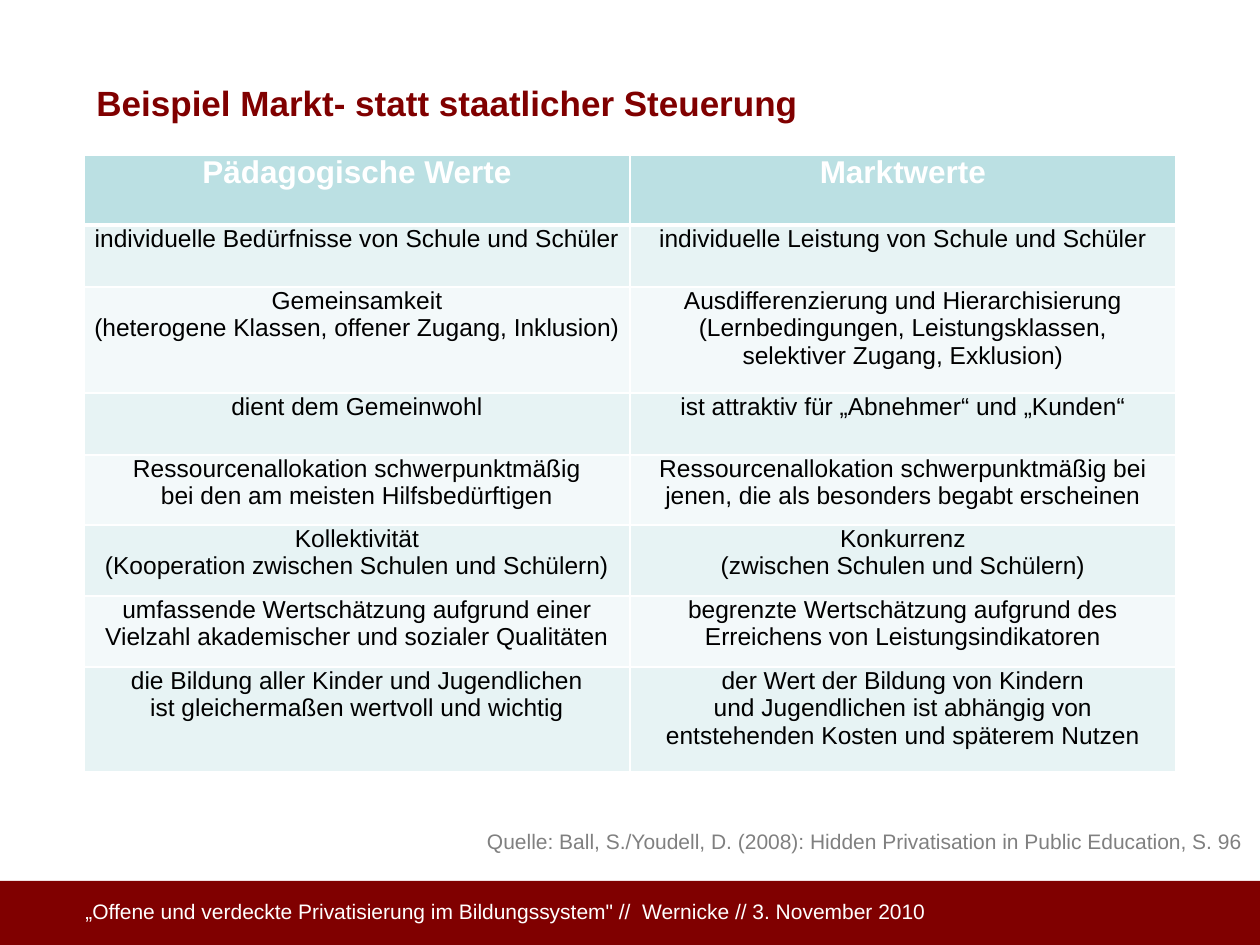
from lxml.etree import SubElement
from pptx import Presentation
from pptx.dml.color import RGBColor
from pptx.enum.shapes import MSO_SHAPE
from pptx.enum.text import PP_ALIGN
from pptx.oxml.ns import qn
from pptx.util import Pt

PX = 914400 / 126
FONT = "Arial"
MAROON = RGBColor(0x80, 0x00, 0x00)
GRAY = RGBColor(0x80, 0x80, 0x80)
WHITE = RGBColor(0xFF, 0xFF, 0xFF)
BLACK = RGBColor(0x00, 0x00, 0x00)
HEADER_FILL = RGBColor(0xBB, 0xE0, 0xE3)
BAND_FILLS = (RGBColor(0xE7, 0xF3, 0xF4), RGBColor(0xF3, 0xF9, 0xFA))

ROW_HEIGHTS = (70, 62, 106, 62, 70, 71, 71, 105)
VALUES = (
    ("Pädagogische Werte", "Marktwerte"),
    ("individuelle Bedürfnisse von Schule und Schüler",
     "individuelle Leistung von Schule und Schüler"),
    ("Gemeinsamkeit\n(heterogene Klassen, offener Zugang, Inklusion)",
     "Ausdifferenzierung und Hierarchisierung\n(Lernbedingungen, Leistungsklassen,\n"
     "selektiver Zugang, Exklusion)"),
    ("dient dem Gemeinwohl", "ist attraktiv für „Abnehmer“ und „Kunden“"),
    ("Ressourcenallokation schwerpunktmäßig\nbei den am meisten Hilfsbedürftigen",
     "Ressourcenallokation schwerpunktmäßig bei jenen, die als besonders begabt erscheinen"),
    ("Kollektivität\n(Kooperation zwischen Schulen und Schülern)",
     "Konkurrenz\v(zwischen Schulen und Schülern)"),
    ("umfassende Wertschätzung aufgrund einer Vielzahl akademischer und sozialer Qualitäten",
     "begrenzte Wertschätzung aufgrund des Erreichens von Leistungsindikatoren"),
    ("die Bildung aller Kinder und Jugendlichen\nist gleichermaßen wertvoll und wichtig",
     "der Wert der Bildung von Kindern\nund Jugendlichen ist abhängig von\n"
     "entstehenden Kosten und späterem Nutzen"),
)


def px(n):
    return round(n * PX)


def format_text(tf, size, color, bold=False, align=PP_ALIGN.LEFT):
    for p in tf.paragraphs:
        p.alignment = align
        for r in p.runs:
            r.font.name = FONT
            r.font.size = Pt(size)
            r.font.bold = bold
            r.font.color.rgb = color


def add_text(slide, box, text, size, color, bold=False, align=PP_ALIGN.LEFT):
    tf = slide.shapes.add_textbox(*map(px, box)).text_frame
    tf.word_wrap = True
    tf.text = text
    format_text(tf, size, color, bold, align)
    return tf


def set_borders(cell, bottom):
    """Draw white cell borders, 1 pt except for the given bottom width."""
    tc_pr = cell._tc.get_or_add_tcPr()
    for tag, width in (("a:lnL", 1), ("a:lnR", 1), ("a:lnT", 1), ("a:lnB", bottom)):
        ln = SubElement(tc_pr, qn(tag), w=str(Pt(width)))
        fill = SubElement(ln, qn("a:solidFill"))
        SubElement(fill, qn("a:srgbClr"), val=str(WHITE))


def add_values_table(slide, left, top, width):
    frame = slide.shapes.add_table(len(VALUES), 2, px(left), px(top),
                                   px(width), px(sum(ROW_HEIGHTS)))
    table = frame.table
    for i, (height, texts) in enumerate(zip(ROW_HEIGHTS, VALUES)):
        table.rows[i].height = px(height)
        header = i == 0
        for j, text in enumerate(texts):
            cell = table.cell(i, j)
            cell.margin_left = cell.margin_right = px(6)
            cell.margin_top = cell.margin_bottom = 0
            cell.text_frame.text = text
            format_text(cell.text_frame, 18 if header else 14,
                        WHITE if header else BLACK, header, PP_ALIGN.CENTER)
            set_borders(cell, 3 if header else 1)
            cell.fill.solid()
            cell.fill.fore_color.rgb = HEADER_FILL if header else BAND_FILLS[(i - 1) % 2]


def add_footer(slide, left, top, width, height):
    sp = slide.shapes.add_shape(MSO_SHAPE.RECTANGLE, px(left), px(top),
                                px(width), px(height))
    sp.shadow.inherit = False
    sp.fill.solid()
    sp.fill.fore_color.rgb = MAROON
    sp.line.fill.background()
    add_text(slide, (left + 73, top + 11, 1134, 30),
             "„Offene und verdeckte Privatisierung im Bildungssystem\" //  "
             "Wernicke // 3. November 2010", 12, WHITE)


def main():
    prs = Presentation()
    prs.slide_width, prs.slide_height = px(1260), px(945)
    slide = prs.slides.add_slide(prs.slide_layouts[6])
    add_footer(slide, 0, 881, 1260, 64)
    title = add_text(slide, (84, 67, 1103, 59),
                     "Beispiel Markt- statt staatlicher Steuerung", 20, MAROON, True)
    title.paragraphs[0].line_spacing = 1.2
    add_text(slide, (0, 822, 1255, 38),
             "Quelle: Ball, S./Youdell, D. (2008): Hidden Privatisation in Public "
             "Education, S. 96", 12, GRAY, align=PP_ALIGN.RIGHT)
    add_values_table(slide, 84, 155, 1092)
    prs.save("out.pptx")


if __name__ == "__main__":
    main()
